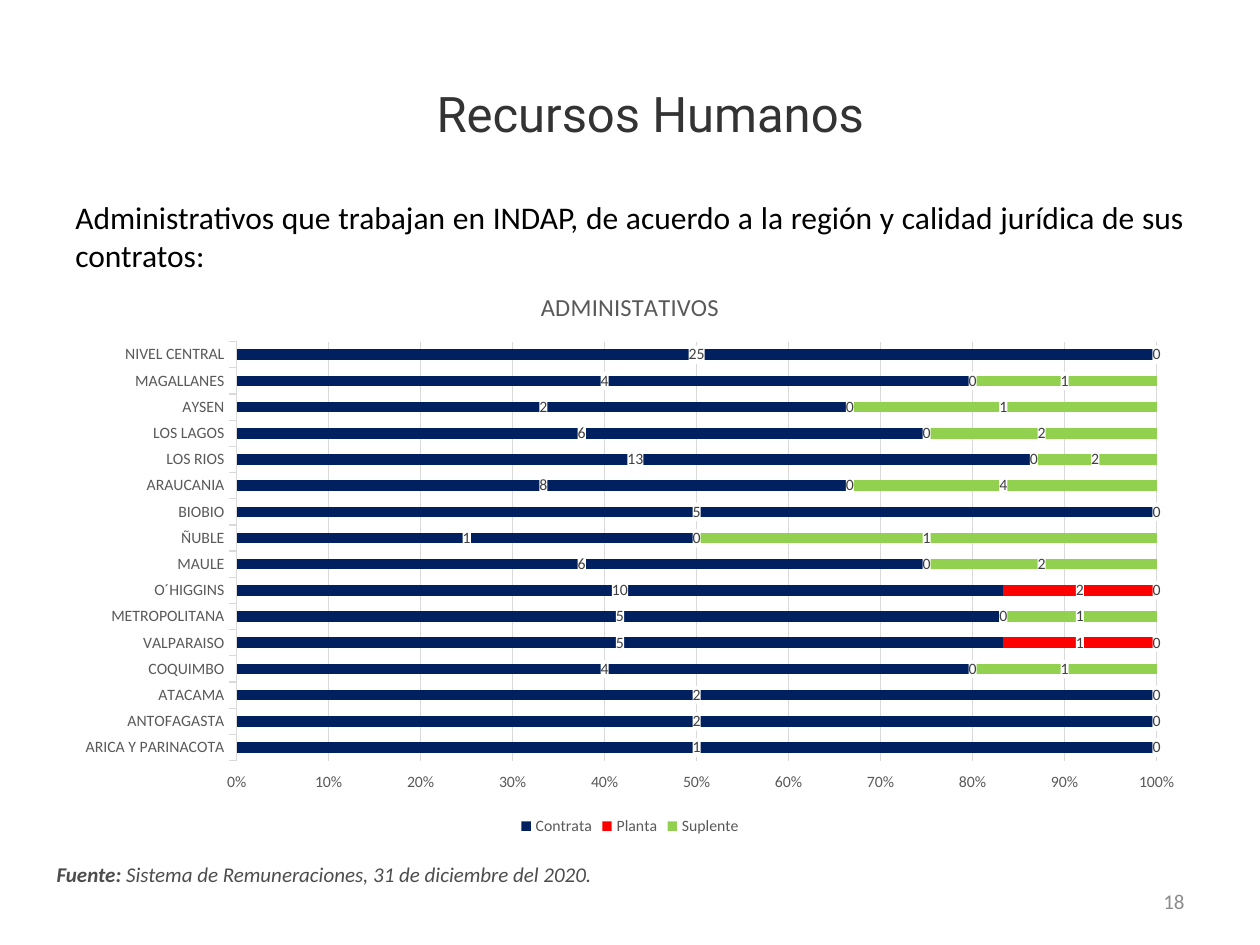
from lxml import etree
from pptx import Presentation
from pptx import util as u
from pptx.chart.data import CategoryChartData
from pptx.dml.color import RGBColor
from pptx.enum import chart as ch, text
from pptx.oxml import parse_xml
from pptx.oxml.ns import nsdecls

COLORS = {"title": "333333", "body": "000000", "source": "4D4D4D", "number": "8C8C8C",
          "axis": "595959", "grid": "D9D9D9", "label": "404040",
          "Contrata": "002060", "Planta": "FF0000", "Suplente": "92D050"}

REGIONS = [("ARICA Y PARINACOTA", 1, 0, 0), ("ANTOFAGASTA", 2, 0, 0), ("ATACAMA", 2, 0, 0),
           ("COQUIMBO", 4, 0, 1), ("VALPARAISO", 5, 1, 0), ("METROPOLITANA", 5, 0, 1),
           ("O´HIGGINS", 10, 2, 0), ("MAULE", 6, 0, 2), ("ÑUBLE", 1, 0, 1),
           ("BIOBIO", 5, 0, 0), ("ARAUCANIA", 8, 0, 4), ("LOS RIOS", 13, 0, 2),
           ("LOS LAGOS", 6, 0, 2), ("AYSEN", 2, 0, 1), ("MAGALLANES", 4, 0, 1),
           ("NIVEL CENTRAL", 25, 0, 0)]


class Deck:
    """Holds the style and the current slide, and adds each kind of element."""

    def __init__(self, width, height):
        self.prs = Presentation()
        self.prs.slide_width, self.prs.slide_height = u.Inches(width), u.Inches(height)
        self.s = self.prs.slides.add_slide(self.prs.slide_layouts[6])

    def font(self, font, color, size, name="Calibri", **extra):
        values = {"name": name, "size": u.Pt(size), **extra}
        for key, value in values.items():
            setattr(font, key, value)
        font.color.rgb = RGBColor.from_string(COLORS[color])

    def text(self, box, runs, align=text.PP_ALIGN.LEFT, anchor=text.MSO_ANCHOR.TOP, **margins):
        tf = self.s.shapes.add_textbox(*map(u.Inches, box)).text_frame
        values = {"word_wrap": True, "vertical_anchor": anchor}
        values.update({key: u.Inches(value) for key, value in margins.items()})
        for key, value in values.items():
            setattr(tf, key, value)
        p = tf.paragraphs[0]
        p.alignment = align
        for content, style in runs:
            r = p.add_run()
            r.text = content
            self.font(r.font, **style)

    def line(self, line):
        line.color.rgb = RGBColor.from_string(COLORS["grid"])
        line.width = u.Pt(0.75)

    def series(self, ser):
        ser.format.fill.solid()
        ser.format.fill.fore_color.rgb = RGBColor.from_string(COLORS[ser.name])
        labels = ser.data_labels
        labels.show_value = True
        labels.position = ch.XL_LABEL_POSITION.CENTER
        self.font(labels.font, "label", 9)
        white = parse_xml(f'<c:spPr {nsdecls("c", "a")}><a:solidFill>'
                          '<a:srgbClr val="FFFFFF"/></a:solidFill></c:spPr>')
        ser._element.find(".//{*}dLbls/{*}txPr").addprevious(white)

    def chart(self, box, title, names, rows):
        data = CategoryChartData()
        data.categories = [row[0] for row in rows]
        for i, name in enumerate(names, 1):
            data.add_series(name, [row[i] for row in rows])
        chart = self.s.shapes.add_chart(ch.XL_CHART_TYPE.BAR_STACKED_100,
                                        *map(u.Inches, box), data).chart
        self.font(chart.font, "body", 10)
        chart.has_title = True
        p = chart.chart_title.text_frame.paragraphs[0]
        r = p.add_run()
        r.text = title
        self.font(r.font, "axis", 14, bold=False)
        chart.chart_title.include_in_layout = False
        chart.has_legend = True
        chart.legend.position = ch.XL_LEGEND_POSITION.BOTTOM
        chart.legend.include_in_layout = False
        self.font(chart.legend.font, "axis", 9)
        plot = chart.plots[0]
        for key, value in {"gap_width": 150, "overlap": 100, "vary_by_categories": False}.items():
            setattr(plot, key, value)
        for axis in (chart.category_axis, chart.value_axis):
            axis.major_tick_mark = ch.XL_TICK_MARK.OUTSIDE
            self.font(axis.tick_labels.font, "axis", 9)
        self.line(chart.category_axis.format.line)
        chart.value_axis.format.line.fill.background()
        chart.value_axis.has_major_gridlines = True
        self.line(chart.value_axis.major_gridlines.format.line)
        chart.value_axis.tick_labels.number_format = "0%"
        chart.value_axis.tick_labels.number_format_is_linked = False
        for ser in plot.series:
            self.series(ser)


def main():
    deck = Deck(10, 7.5)
    align, middle = text.PP_ALIGN, text.MSO_ANCHOR.MIDDLE
    deck.text((0.5, 0.3, 9, 1.01),
              [("Recursos Humanos", {"color": "title", "size": 28, "name": "Roboto"})],
              align.CENTER, middle, margin_left=0.42, margin_top=0.23)
    deck.text((0.5, 1.52, 9, 5.18),
              [("Administrativos que trabajan en INDAP, de acuerdo a la región y calidad "
                "jurídica de sus contratos:", {"color": "body", "size": 18})], align.JUSTIFY)
    source = {"color": "source", "size": 12, "italic": True}
    deck.text((0.35, 6.79, 5.75, 0.3),
              [("Fuente: ", {**source, "bold": True}),
               ("Sistema de Remuneraciones, 31 de diciembre del 2020.", source)])
    deck.text((7.17, 6.95, 2.33, 0.4), [("18", {"color": "number", "size": 12})],
              align.RIGHT, middle)
    deck.chart((0.5, 2.12, 9, 4.55), "ADMINISTATIVOS",
               ("Contrata", "Planta", "Suplente"), REGIONS)
    deck.prs.save("out.pptx")


if __name__ == "__main__":
    main()
